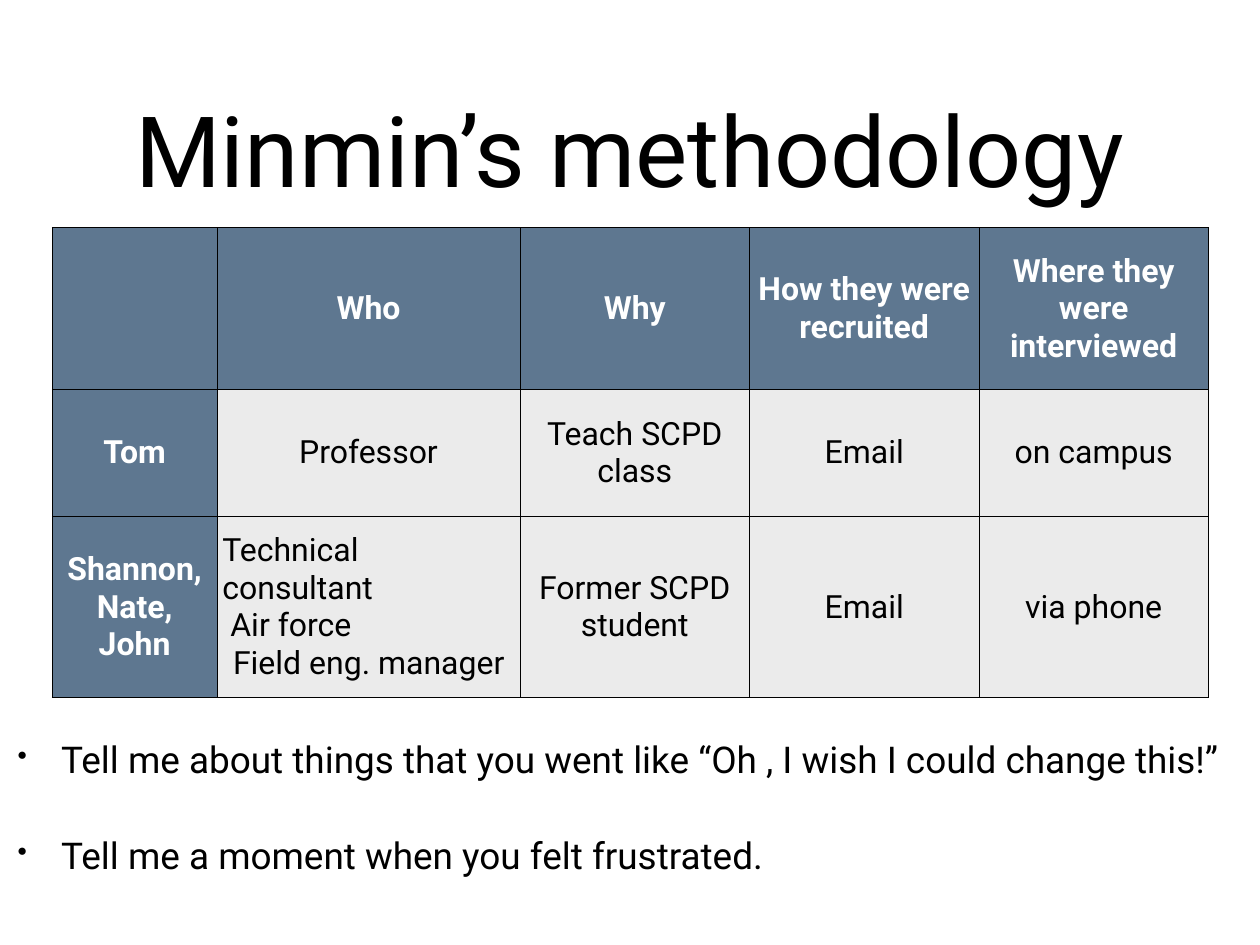
from lxml.etree import SubElement
from pptx import Presentation
from pptx.dml.color import RGBColor
from pptx.enum.text import MSO_ANCHOR as Anchor, MSO_AUTO_SIZE as AutoSize, PP_ALIGN as Align
from pptx.oxml.ns import qn
from pptx.util import Inches, Pt

BLACK, WHITE, HEADER_BLUE, BODY_GRAY = "000000", "FFFFFF", "5E7790", "EBEBEB"


def color(value):
    return RGBColor.from_string(value)


class MethodologySlide:
    font = "Roboto"
    inset = Inches(0.06)

    def __init__(self, deck):
        self.slide = deck.slides.add_slide(deck.slide_layouts[6])

    def add_text(self, paragraph, text, size, ink=BLACK, bold=False, align=Align.LEFT):
        paragraph.alignment = align
        run = paragraph.add_run()
        run.text = text
        run.font.name = self.font
        run.font.size = Pt(size)
        run.font.bold = bold
        run.font.color.rgb = color(ink)

    def inset_all(self, target):
        target.margin_left = target.margin_right = self.inset
        target.margin_top = target.margin_bottom = self.inset
        target.vertical_anchor = Anchor.MIDDLE

    def frame(self, left, top, width, height):
        box = self.slide.shapes.add_textbox(
            Inches(left), Inches(top), Inches(width), Inches(height))
        frame = box.text_frame
        frame.word_wrap = True
        self.inset_all(frame)
        return frame

    def title(self, text, *place):
        self.add_text(self.frame(*place).paragraphs[0], text, 80, align=Align.CENTER)

    def bullets(self, questions, *place):
        frame = self.frame(*place)
        frame.auto_size = AutoSize.SHAPE_TO_FIT_TEXT
        for index, question in enumerate(questions):
            paragraph = frame.add_paragraph() if index else frame.paragraphs[0]
            self.add_text(paragraph, question, 30)
            paragraph.space_before = Pt(42)
            properties = paragraph._p.get_or_add_pPr()
            properties.set("marL", str(Inches(0.49)))
            properties.set("indent", str(Inches(-0.49)))
            SubElement(properties, qn("a:buSzPct"), val="75000")
            SubElement(properties, qn("a:buChar"), char="•")

    def border(self, cell):
        properties = cell._tc.get_or_add_tcPr()
        for side in ("a:lnL", "a:lnR", "a:lnT", "a:lnB"):
            line = SubElement(properties, qn(side), w=str(Pt(1)))
            SubElement(SubElement(line, qn("a:solidFill")), qn("a:srgbClr"), val=BLACK)

    def cell(self, cell, content, heading):
        self.border(cell)
        cell.fill.solid()
        cell.fill.fore_color.rgb = color(HEADER_BLUE if heading else BODY_GRAY)
        self.inset_all(cell)
        if isinstance(content, str):
            if content:
                self.add_text(cell.text_frame.paragraphs[0], content, 26,
                              WHITE if heading else BLACK, heading, Align.CENTER)
            return
        frame = cell.text_frame
        for index, (text, left, right) in enumerate(content):
            paragraph = frame.add_paragraph() if index else frame.paragraphs[0]
            self.add_text(paragraph, text, 26)
            properties = paragraph._p.get_or_add_pPr()
            properties.set("marL", str(Inches(left)))
            properties.set("marR", str(Inches(right)))

    def table(self, rows, widths, heights, left, top):
        table = self.slide.shapes.add_table(
            len(rows), len(widths), Inches(left), Inches(top),
            Inches(sum(widths)), Inches(sum(heights))).table
        for column, width in zip(table.columns, widths):
            column.width = Inches(width)
        for r, (row, height) in enumerate(zip(rows, heights)):
            table.rows[r].height = Inches(height)
            for c, content in enumerate(row):
                self.cell(table.cell(r, c), content, r == 0 or c == 0)


def main():
    deck = Presentation()
    deck.slide_width, deck.slide_height = Inches(14.22), Inches(10.67)
    methodology = MethodologySlide(deck)

    methodology.title("Minmin’s methodology", 1.04, 0.49, 12.14, 2.36)

    roles = [("Technical consultant", 0, 0.2), ("Air force", 0.09, 0),
             ("Field eng. manager", 0.12, 0)]
    interviews = [
        ["", "Who", "Why", "How they were recruited", "Where they were interviewed"],
        ["Tom", "Professor", "Teach SCPD class", "Email", "on campus"],
        ["Shannon, Nate, John", roles, "Former SCPD student", "Email", "via phone"],
    ]
    methodology.table(interviews, [1.86, 3.42] + [2.59] * 3, [1.83, 1.43, 2.05], 0.59, 2.57)

    methodology.bullets([
        "Tell me about things that you went like “Oh , I wish I could change this!”",
        "Tell me a moment when you felt frustrated.",
    ], 0.14, 8.26, 14.02, 1.69)

    deck.save("out.pptx")


if __name__ == "__main__":
    main()
